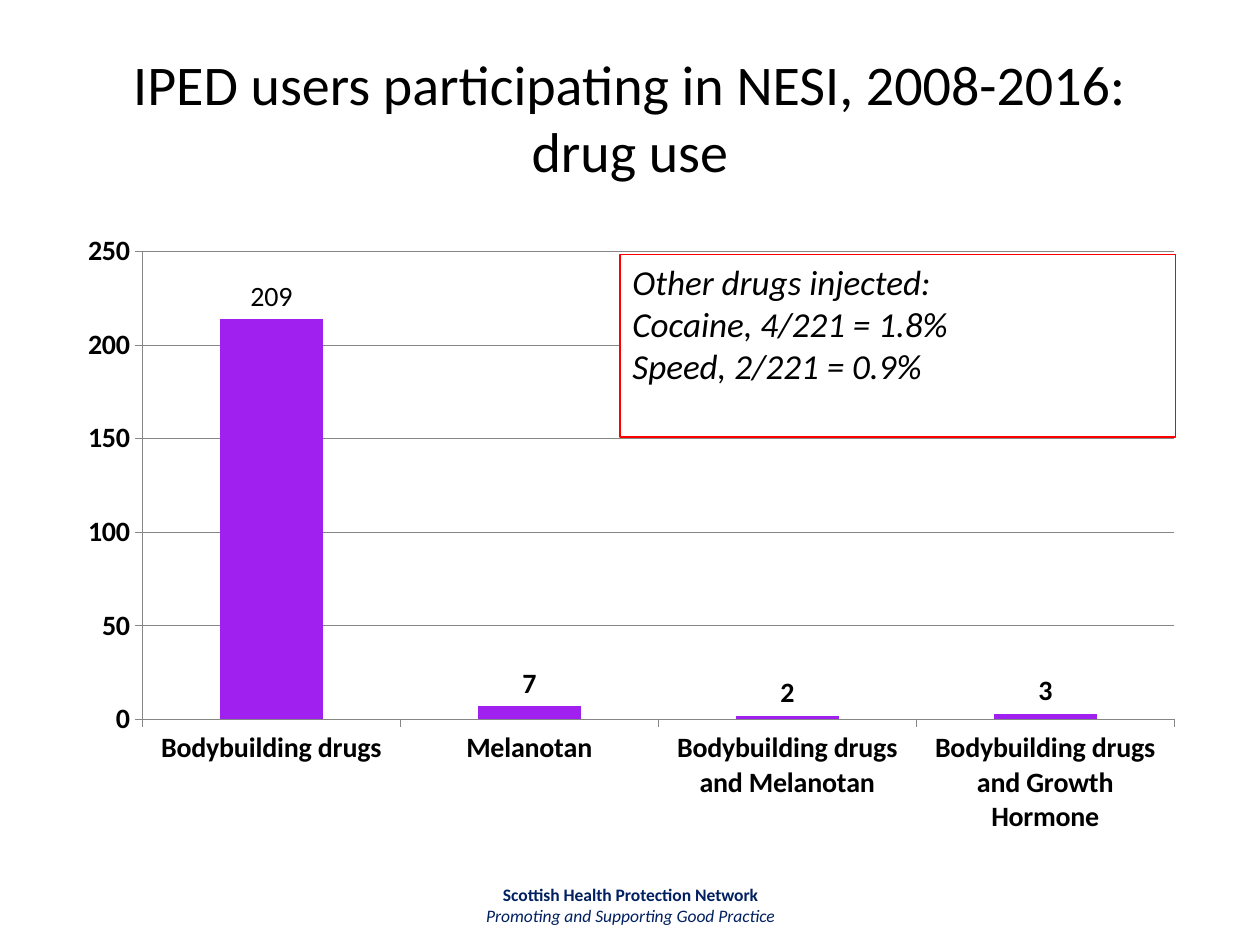
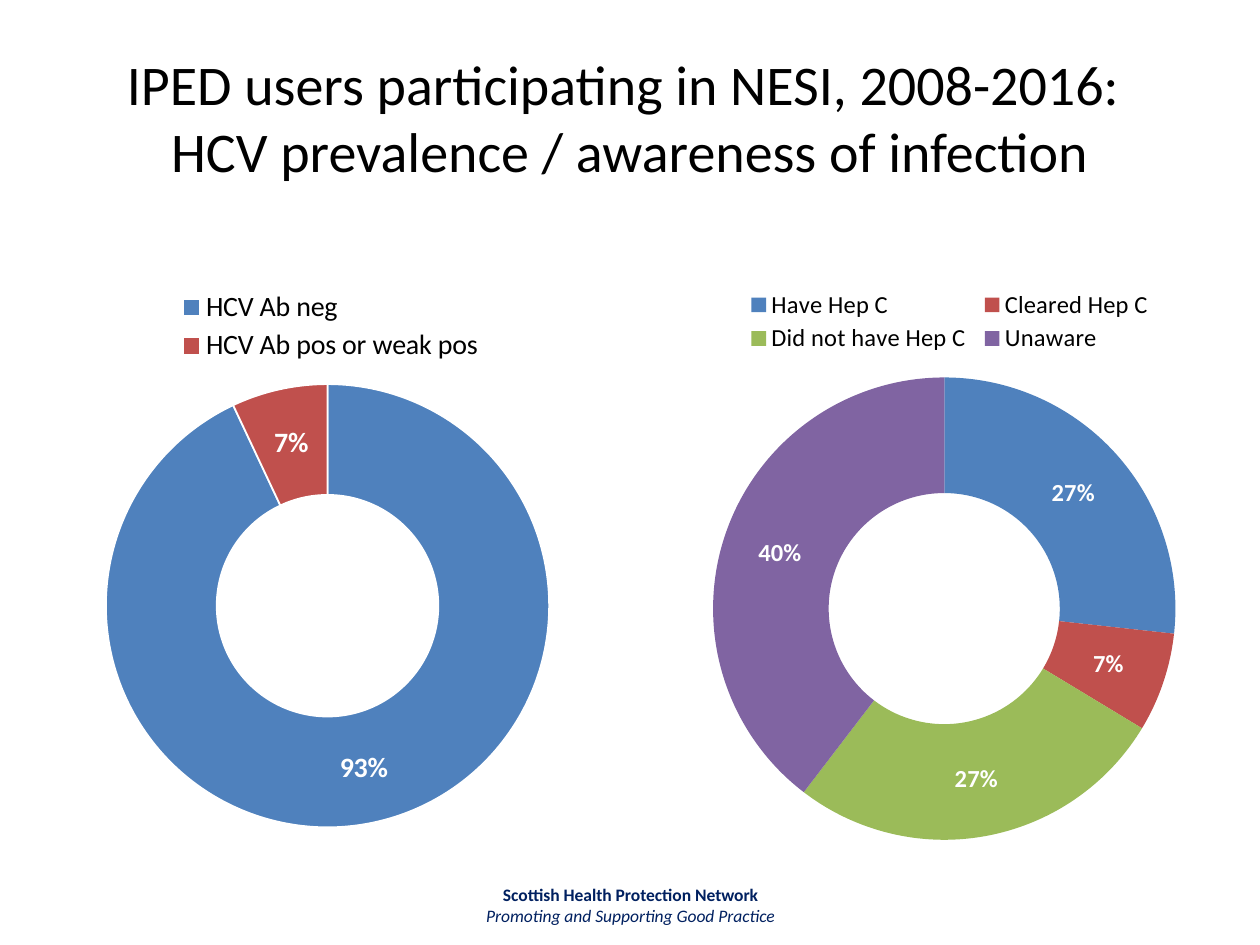
from dataclasses import dataclass

from lxml import etree
from pptx import Presentation
from pptx.chart import data as cd
from pptx.chart.chart import Chart
from pptx.dml.color import RGBColor
from pptx.enum import chart as ec, shapes, text
from pptx.oxml import ns
from pptx.slide import Slide
from pptx.text.text import TextFrame
from pptx.util import Pt


@dataclass(frozen=True)
class Theme:
    font: str = "Calibri"
    ink: str = "000000"
    paper: str = "FFFFFF"
    navy: str = "002060"
    alert: str = "FF0000"
    bar: str = "A020F0"
    grid: str = "868686"
    rings: tuple[str, ...] = ("4F81BD", "C0504D", "9BBB59", "8064A2")
    title: int = 32
    note: int = 20
    label: int = 16
    small: int = 14
    foot: int = 10


T = Theme()


@dataclass(frozen=True)
class Box:
    x: float
    y: float
    w: float
    h: float

    def place(self) -> tuple[Pt, Pt, Pt, Pt]:
        return Pt(self.x), Pt(self.y), Pt(self.w), Pt(self.h)


@dataclass(frozen=True)
class Line:
    words: str
    size: int
    color: str = T.ink
    bold: bool = False
    slant: bool = False


@dataclass(frozen=True)
class Ring:
    box: Box
    plot: Box    # shares of the chart frame
    key: Box     # shares of the chart frame
    cats: tuple[str, ...]
    vals: tuple[float, ...]
    size: int
    edge: bool   # white line between slices


TITLE = Box(36, 21.6, 648, 90)
FOOT = Box(246.2, 501.8, 228.2, 28.8)
BARS = Box(36, 126, 648, 356.4)
BAR_PLOT = Box(0.07, 0.05, 0.91, 0.75)
NOTE = Box(354.3, 145.4, 317.5, 104.4)

RINGS = (
    Ring(Box(14.4, 157, 345.6, 329), Box(0.13, 0.19, 0.74, 0.77),
         Box(0.25, 0.02, 0.51, 0.14),
         ("HCV Ab neg", "HCV Ab pos or weak pos"), (0.93, 0.07),
         T.label, True),
    Ring(Box(382.3, 157, 314.6, 334.8), Box(0.08, 0.17, 0.84, 0.8),
         Box(0.13, 0.02, 0.76, 0.12),
         ("Have Hep C", "Cleared Hep C", "Did not have Hep C", "Unaware"),
         (0.27, 0.07, 0.27, 0.4), T.small, False),
)


def rgb(code: str) -> RGBColor:
    return RGBColor.from_string(code)


def style(font, size: int, color: str = T.ink, bold: bool = False,
          slant: bool = False) -> None:
    font.name, font.size = T.font, Pt(size)
    font.bold, font.italic = bold, slant
    font.color.rgb = rgb(color)


def write(frame: TextFrame, lines: tuple[Line, ...], align) -> None:
    """One paragraph a line; a newline in the words is a line break."""
    frame.word_wrap = True
    for i, line in enumerate(lines):
        para = frame.paragraphs[0] if i == 0 else frame.add_paragraph()
        para.alignment = align
        for j, part in enumerate(line.words.split("\n")):
            if j:
                para.add_line_break()
            run = para.add_run()
            run.text = part
            style(run.font, line.size, line.color, line.bold, line.slant)


def start(deck, title: str) -> Slide:
    """Blank slide with the shared title and footer."""
    slide = deck.slides.add_slide(deck.slide_layouts[6])
    mid = text.PP_ALIGN.CENTER
    foot = slide.shapes.add_textbox(*FOOT.place())
    write(foot.text_frame, (
        Line("Scottish Health Protection Network", T.foot, T.navy, bold=True),
        Line("Promoting and Supporting Good Practice", T.foot, T.navy,
             slant=True)), mid)
    head = slide.shapes.add_textbox(*TITLE.place())
    head.text_frame.vertical_anchor = text.MSO_ANCHOR.MIDDLE
    write(head.text_frame, (Line(title, T.title),), mid)
    return slide


def arrange(host, area: Box, index: int, inner: bool = False) -> None:
    """Fix a plot area or legend at shares of its chart frame."""
    for old in host.findall(ns.qn("c:layout")):
        host.remove(old)
    layout = etree.Element(ns.qn("c:layout"))
    man = etree.SubElement(layout, ns.qn("c:manualLayout"))
    pairs = [("layoutTarget", "inner")] if inner else []
    pairs += [("xMode", "edge"), ("yMode", "edge")]
    pairs += [(k, str(getattr(area, k))) for k in "xywh"]
    for tag, val in pairs:
        etree.SubElement(man, ns.qn(f"c:{tag}")).set("val", val)
    host.insert(index, layout)


def add_chart(slide: Slide, kind, box: Box, plot: Box,
              cats: tuple[str, ...], vals: tuple[float, ...]) -> Chart:
    data = cd.CategoryChartData()
    data.categories = cats
    data.add_series("Series 1", vals)
    chart = slide.shapes.add_chart(kind, *box.place(), data).chart
    chart.has_title = False
    chart.has_legend = False
    arrange(chart.element.xpath(".//c:plotArea")[0], plot, 0, inner=True)
    return chart


def add_bars(slide: Slide) -> None:
    cats = ("Bodybuilding drugs", "Melanotan",
            "Bodybuilding drugs and Melanotan",
            "Bodybuilding drugs and Growth Hormone")
    chart = add_chart(slide, ec.XL_CHART_TYPE.COLUMN_CLUSTERED, BARS,
                      BAR_PLOT, cats, (214, 7, 2, 3))
    style(chart.font, T.label, bold=True)
    plot = chart.plots[0]
    plot.gap_width = 150
    plot.vary_by_categories = False
    bars = plot.series[0]
    bars.format.fill.solid()
    bars.format.fill.fore_color.rgb = rgb(T.bar)
    # Value labels, the first with its own wording
    labels = bars.data_labels
    labels.show_value = True
    labels.position = ec.XL_LABEL_POSITION.OUTSIDE_END
    style(labels.font, T.label, bold=True)
    first = bars.points[0].data_label
    run = first.text_frame.paragraphs[0].add_run()
    run.text = "209"
    style(run.font, T.label)
    first.position = ec.XL_LABEL_POSITION.OUTSIDE_END
    # Axes
    axis = chart.value_axis
    axis.minimum_scale, axis.maximum_scale, axis.major_unit = 0, 250, 50
    axis.has_major_gridlines = True
    for edge in (axis, chart.category_axis):
        edge.major_tick_mark = ec.XL_TICK_MARK.OUTSIDE
        edge.format.line.color.rgb = rgb(T.grid)
    axis.major_gridlines.format.line.color.rgb = rgb(T.grid)


def add_note(slide: Slide) -> None:
    note = slide.shapes.add_shape(shapes.MSO_SHAPE.RECTANGLE, *NOTE.place())
    note.shadow.inherit = False
    note.fill.solid()
    note.fill.fore_color.rgb = rgb(T.paper)
    note.line.color.rgb = rgb(T.alert)
    note.line.width = Pt(0.75)
    note.text_frame.vertical_anchor = text.MSO_ANCHOR.TOP
    words = ("Other drugs injected:", "Cocaine, 4/221 = 1.8%",
             "Speed, 2/221 = 0.9%")
    write(note.text_frame, tuple(Line(w, T.note, slant=True) for w in words),
          text.PP_ALIGN.LEFT)


def add_ring(slide: Slide, ring: Ring) -> None:
    chart = add_chart(slide, ec.XL_CHART_TYPE.DOUGHNUT, ring.box, ring.plot,
                      ring.cats, ring.vals)
    style(chart.font, T.foot)
    # Legend
    chart.has_legend = True
    chart.legend.position = ec.XL_LEGEND_POSITION.TOP
    chart.legend.include_in_layout = False
    style(chart.legend.font, ring.size)
    arrange(chart.element.xpath(".//c:legend")[0], ring.key, 1)
    # Slices
    plot = chart.plots[0]
    plot.vary_by_categories = True
    for i, color in enumerate(T.rings[:len(ring.vals)]):
        look = plot.series[0].points[i].format
        look.fill.solid()
        look.fill.fore_color.rgb = rgb(color)
        if ring.edge:
            look.line.color.rgb = rgb(T.paper)
            look.line.width = Pt(1)
        else:
            look.line.fill.background()
    # Labels
    labels = plot.series[0].data_labels
    labels.show_value = True
    labels.show_percentage = False
    labels.number_format = "###0%"
    labels.number_format_is_linked = False
    style(labels.font, ring.size, T.paper, bold=True)


def main() -> None:
    deck = Presentation()
    deck.slide_width, deck.slide_height = Pt(720), Pt(540)

    # Drug use
    use = start(deck, "IPED users participating in NESI, 2008-2016: drug use")
    add_bars(use)
    add_note(use)

    # Prevalence and awareness
    hcv = start(deck, "IPED users participating in NESI, 2008-2016: \n"
                      "HCV prevalence / awareness of infection")
    for ring in RINGS:
        add_ring(hcv, ring)

    deck.save("out.pptx")


if __name__ == "__main__":
    main()
